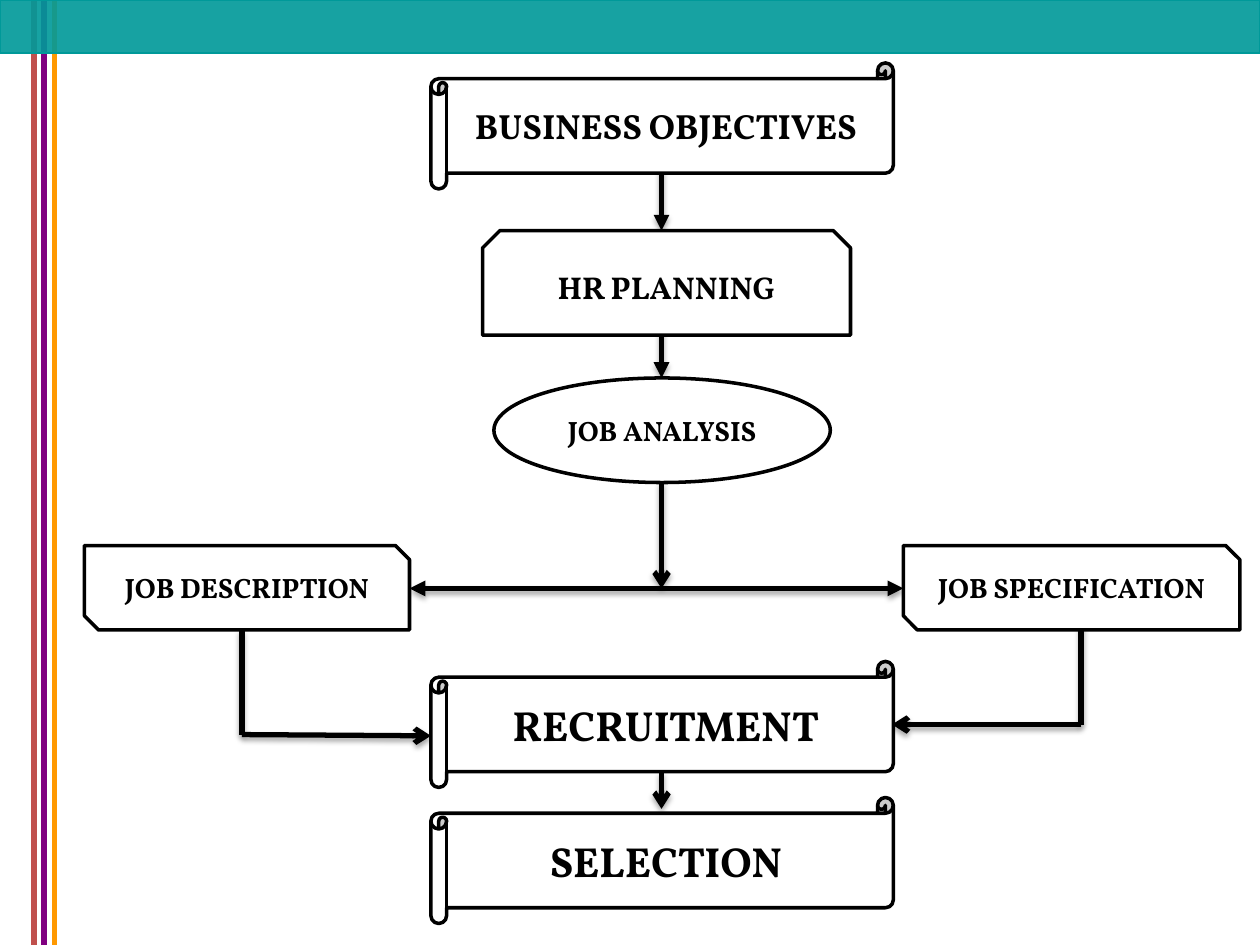
from lxml.etree import SubElement
from pptx import Presentation
from pptx.dml.color import RGBColor
from pptx.enum.shapes import MSO_CONNECTOR, MSO_SHAPE
from pptx.enum.text import MSO_ANCHOR, PP_ALIGN
from pptx.oxml.ns import qn
from pptx.util import Inches, Pt

FONT = "Vollkorn"
COLORS = {
    "ink": "000000",
    "paper": "FFFFFF",
    "teal": "009999",
    "red": "C0504D",
    "purple": "800080",
    "orange": "FF9900",
}
CENTER = 5.25  # axis of the main column
LEFT, RIGHT = 1.92, 8.58  # axes of the side branches
SCROLL = MSO_SHAPE.HORIZONTAL_SCROLL
SNIP_TOP = MSO_SHAPE.SNIP_2_SAME_RECTANGLE
SNIP_DIAGONAL = MSO_SHAPE.SNIP_2_DIAG_RECTANGLE

# preset, left, top, width, height, text, size
BOXES = [
    (SCROLL, 3.42, 0.5, 3.67, 1, "BUSINESS OBJECTIVES", 20),
    (SNIP_TOP, 3.83, 1.83, 2.92, 0.83, "HR PLANNING", 18),
    (MSO_SHAPE.OVAL, 3.92, 3, 2.67, 0.83, "JOB ANALYSIS", 16),
    (SNIP_DIAGONAL, 0.67, 4.33, 2.58, 0.67, "JOB DESCRIPTION", 16),
    (SNIP_DIAGONAL, 7.17, 4.33, 2.67, 0.67, "JOB SPECIFICATION", 16),
    (SCROLL, 3.42, 5.25, 3.67, 1, "RECRUITMENT", 24),
    (SCROLL, 3.42, 6.33, 3.67, 1, "SELECTION", 24),
]

# start, end, arrowhead at start, arrowhead at end
FLOWS = [
    ((CENTER, 1.33), (CENTER, 1.83), None, "triangle"),
    ((CENTER, 2.58), (CENTER, 3), None, "triangle"),
    ((CENTER, 3.83), (CENTER, 4.67), None, "arrow"),
    ((3.25, 4.67), (7.17, 4.67), "triangle", "triangle"),
    ((LEFT, 5), (LEFT, 5.83), None, None),
    ((LEFT, 5.83), (3.42, 5.84), None, "arrow"),
    ((RIGHT, 4.92), (RIGHT, 5.75), None, None),
    ((RIGHT, 5.75), (7.08, 5.75), None, "arrow"),
    ((CENTER, 6.13), (CENTER, 6.42), None, "arrow"),
]


def rgb(name):
    return RGBColor.from_string(COLORS[name])


def add_shape(slide, preset, box, fill, line, width):
    sp = slide.shapes.add_shape(preset, *(Inches(v) for v in box))
    sp.shadow.inherit = False
    sp.fill.solid()
    sp.fill.fore_color.rgb = rgb(fill)
    sp.line.color.rgb = rgb(line)
    sp.line.width = Pt(width)
    return sp


def set_text(sp, text, size=16, color="ink", bold=True):
    tf = sp.text_frame
    tf.word_wrap = True
    tf.vertical_anchor = MSO_ANCHOR.MIDDLE
    p = tf.paragraphs[0]
    p.alignment = PP_ALIGN.CENTER
    r = p.add_run()
    r.text = text
    r.font.name = FONT
    r.font.size = Pt(size)
    r.font.bold = bold
    r.font.color.rgb = rgb(color)


def add_line(slide, start, end, color="ink", head=None, tail=None, shadow=False):
    """Add a 3 pt line with optional arrowheads and a soft shadow below it."""
    points = (Inches(v) for v in (*start, *end))
    line = slide.shapes.add_connector(MSO_CONNECTOR.STRAIGHT, *points)
    line.line.color.rgb = rgb(color)
    line.line.width = Pt(3)
    sp_pr = line.element.spPr
    ln = sp_pr.find(qn("a:ln"))
    for tag, kind in (("a:headEnd", head), ("a:tailEnd", tail)):
        if kind:
            SubElement(ln, qn(tag), type=kind)
    effects = SubElement(sp_pr, qn("a:effectLst"))
    if shadow:
        outer = SubElement(effects, qn("a:outerShdw"), blurRad=str(Pt(3.1)),
                           dist=str(Pt(1.8)), dir="5400000", rotWithShape="0")
        shade = SubElement(outer, qn("a:srgbClr"), val=COLORS["ink"])
        SubElement(shade, qn("a:alpha"), val="35000")


def add_banner(slide):
    sp = add_shape(slide, MSO_SHAPE.RECTANGLE, (0, 0, 10, 0.42), "teal", "teal", 0.75)
    color = sp.element.spPr.find(qn("a:solidFill")).find(qn("a:srgbClr"))
    SubElement(color, qn("a:alpha"), val="91000")


def main():
    prs = Presentation()
    prs.slide_width, prs.slide_height = Inches(10), Inches(7.5)
    slide = prs.slides.add_slide(prs.slide_layouts[6])

    for start, end, head, tail in FLOWS:
        add_line(slide, start, end, head=head, tail=tail, shadow=True)
    for preset, *box, text, size in BOXES:
        sp = add_shape(slide, preset, box, "paper", "ink", 2)
        set_text(sp, text, size=size)
    for i, color in enumerate(("red", "purple", "orange")):
        x = 0.27 + 0.08 * i
        add_line(slide, (x, 0), (x, 7.5), color=color)
    add_banner(slide)

    prs.save("out.pptx")


if __name__ == "__main__":
    main()
